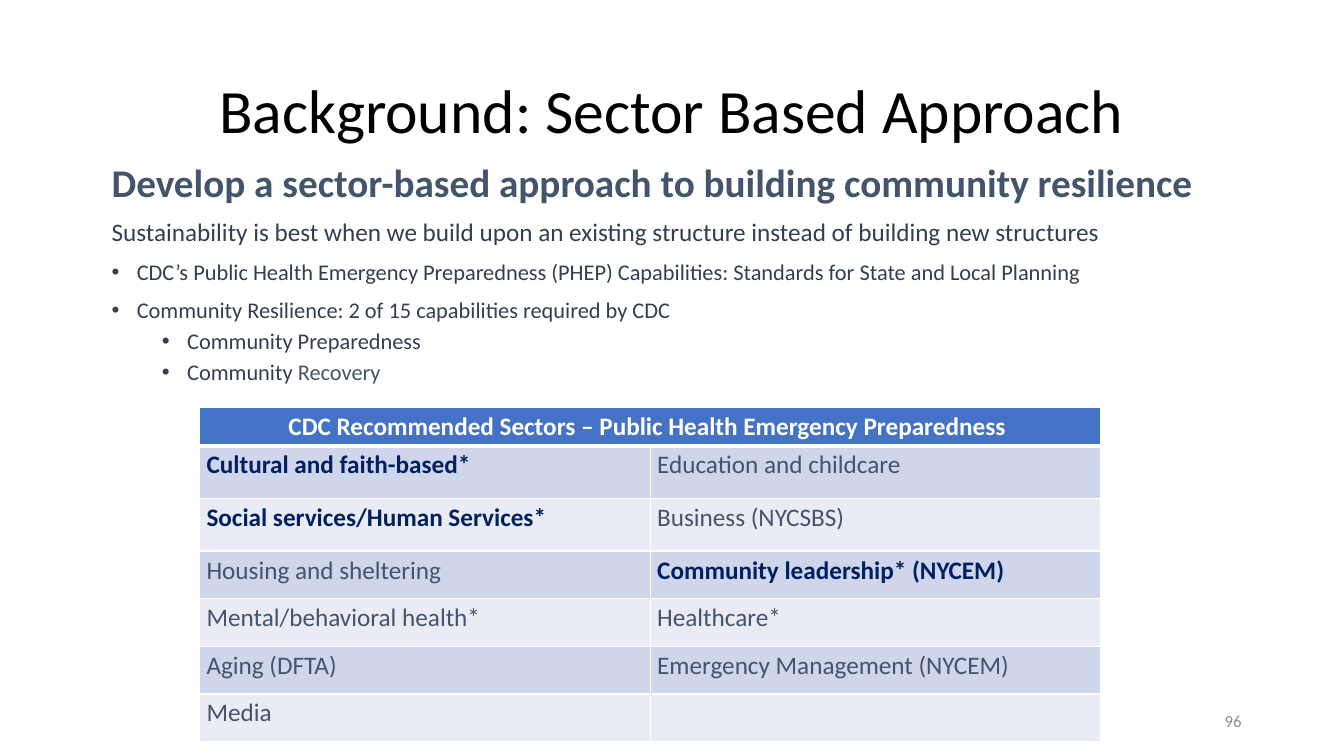
from lxml import etree
from pptx import Presentation
from pptx import util as u
from pptx.dml.color import RGBColor
from pptx.enum import text
from pptx.oxml.ns import qn

COLUMNS, ROWS = 160, 90
SLATE, DARK, NAVY, WHITE = "44546A", "333F50", "002060", "FFFFFF"
HEADER_FILL, BANDS = "4472C4", ("CFD5EA", "E9EBF5")


def color(value):
    return RGBColor.from_string(value)


def apply(target, values):
    for name, value in values.items():
        setattr(target, name, value)


class SlideBuilder:
    font = "Calibri"

    def __init__(self, presentation):
        self.column = presentation.slide_width / COLUMNS
        self.row = presentation.slide_height / ROWS
        self.slide = presentation.slides.add_slide(presentation.slide_layouts[6])

    def area(self, left, top, width, height):
        return (int(left * self.column), int(top * self.row),
                int(width * self.column), int(height * self.row))

    def fill_paragraph(self, paragraph, runs, layout=None, bullet_indent=None):
        if bullet_indent is not None:
            properties = paragraph._p.get_or_add_pPr()
            properties.set("marL", str(u.Inches(bullet_indent)))
            properties.set("indent", str(u.Inches(-0.25)))
            etree.SubElement(properties, qn("a:buFont"), typeface="Arial")
            etree.SubElement(properties, qn("a:buChar"), char="•")
        apply(paragraph, layout or {})
        for words, size, shade, bold in runs:
            run = paragraph.add_run()
            run.text = words
            apply(run.font, {"name": self.font, "size": u.Pt(size), "bold": bold})
            run.font.color.rgb = color(shade)

    def text_box(self, area, paragraphs, anchor=text.MSO_ANCHOR.TOP):
        frame = self.slide.shapes.add_textbox(*self.area(*area)).text_frame
        apply(frame, {"word_wrap": True, "vertical_anchor": anchor})
        for index, content in enumerate(paragraphs):
            paragraph = frame.add_paragraph() if index else frame.paragraphs[0]
            self.fill_paragraph(paragraph, **content)

    def border(self, cell, widths):
        properties = cell._tc.get_or_add_tcPr()
        for index, (side, width) in enumerate(widths.items()):
            line = etree.Element(qn(f"a:ln{side}"), w=str(u.Pt(width)))
            fill = etree.SubElement(line, qn("a:solidFill"))
            etree.SubElement(fill, qn("a:srgbClr"), val=WHITE)
            properties.insert(index, line)

    def table(self, area, heights, header, body):
        shape = self.slide.shapes.add_table(len(heights), 2, *self.area(*area))
        table = shape.table
        for row, height in zip(table.rows, heights):
            row.height = int(height * self.row)
        for row_index in range(len(heights)):
            for column_index in range(2):
                cell = table.cell(row_index, column_index)
                apply(cell, {"margin_left": u.Inches(0.07), "margin_right": u.Inches(0.07),
                             "margin_top": u.Inches(0.04), "margin_bottom": u.Inches(0.04)})
                cell.fill.solid()
                shade = BANDS[(row_index - 1) % 2] if row_index else HEADER_FILL
                cell.fill.fore_color.rgb = color(shade)
                self.border(cell, {"L": 1, "R": 1, "T": 3 if row_index == 1 else 1,
                                   "B": 1 if row_index else 3})
                words = body[row_index - 1][column_index] if row_index else ""
                if words:
                    key = words in KEY_SECTORS
                    self.fill_paragraph(cell.text_frame.paragraphs[0],
                                        [(words, 18, NAVY if key else SLATE, key)])
        table.cell(0, 0).merge(table.cell(0, 1))
        self.fill_paragraph(table.cell(0, 0).text_frame.paragraphs[0],
                            [(header, 18, WHITE, True)],
                            {"alignment": text.PP_ALIGN.CENTER})


KEY_SECTORS = ("Cultural and faith-based*", "Social services/Human Services*",
               "Community leadership* (NYCEM)")
SECTORS = [
    ("Cultural and faith-based*", "Education and childcare"),
    ("Social services/Human Services*", "Business (NYCSBS)"),
    ("Housing and sheltering", "Community leadership* (NYCEM)"),
    ("Mental/behavioral health*", "Healthcare*"),
    ("Aging (DFTA)", "Emergency Management (NYCEM)"),
    ("Media", ""),
]


def main():
    presentation = Presentation()
    apply(presentation, {"slide_width": u.Inches(13.33), "slide_height": u.Inches(7.5)})
    builder = SlideBuilder(presentation)
    first = {"line_spacing": 0.9}
    main_point = {**first, "space_before": u.Pt(10)}
    sub_point = {**first, "space_before": u.Pt(5), "level": 1}

    builder.text_box((11, 4.8, 138, 17.4), [
        {"runs": [("Background: Sector Based Approach", 44, "000000", False)],
         "layout": {**first, "alignment": text.PP_ALIGN.CENTER}},
    ], text.MSO_ANCHOR.MIDDLE)

    builder.text_box((12.1, 18.84, 138, 57.1), [
        {"runs": [("Develop a sector-based approach to building community resilience",
                   28, SLATE, True)], "layout": first},
        {"runs": [("Sustainability is best when we build upon an existing structure "
                   "instead of building new structures", 18, DARK, False)],
         "layout": main_point},
        {"runs": [("CDC’s Public Health Emergency Preparedness (PHEP) Capabilities: "
                   "Standards for State and Local Planning", 16, DARK, False)],
         "layout": main_point, "bullet_indent": 0.25},
        {"runs": [("Community Resilience: 2 of 15 capabilities required by CDC",
                   16, DARK, False)], "layout": main_point, "bullet_indent": 0.25},
        {"runs": [("Community Preparedness", 16, DARK, False)],
         "layout": sub_point, "bullet_indent": 0.75},
        {"runs": [("Community ", 16, DARK, False), ("Recovery", 16, SLATE, False)],
         "layout": sub_point, "bullet_indent": 0.75},
    ])

    builder.table((23.75, 48.5, 107.3, 39.7), [4.5, 6.3, 6.25] + [5.67] * 4,
                  "CDC Recommended Sectors – Public Health Emergency Preparedness ", SECTORS)

    builder.text_box((113, 83.4, 36, 4.8), [
        {"runs": [("96", 12, "8C8C8C", False)],
         "layout": {"alignment": text.PP_ALIGN.RIGHT}},
    ], text.MSO_ANCHOR.MIDDLE)
    presentation.save("out.pptx")


if __name__ == "__main__":
    main()
